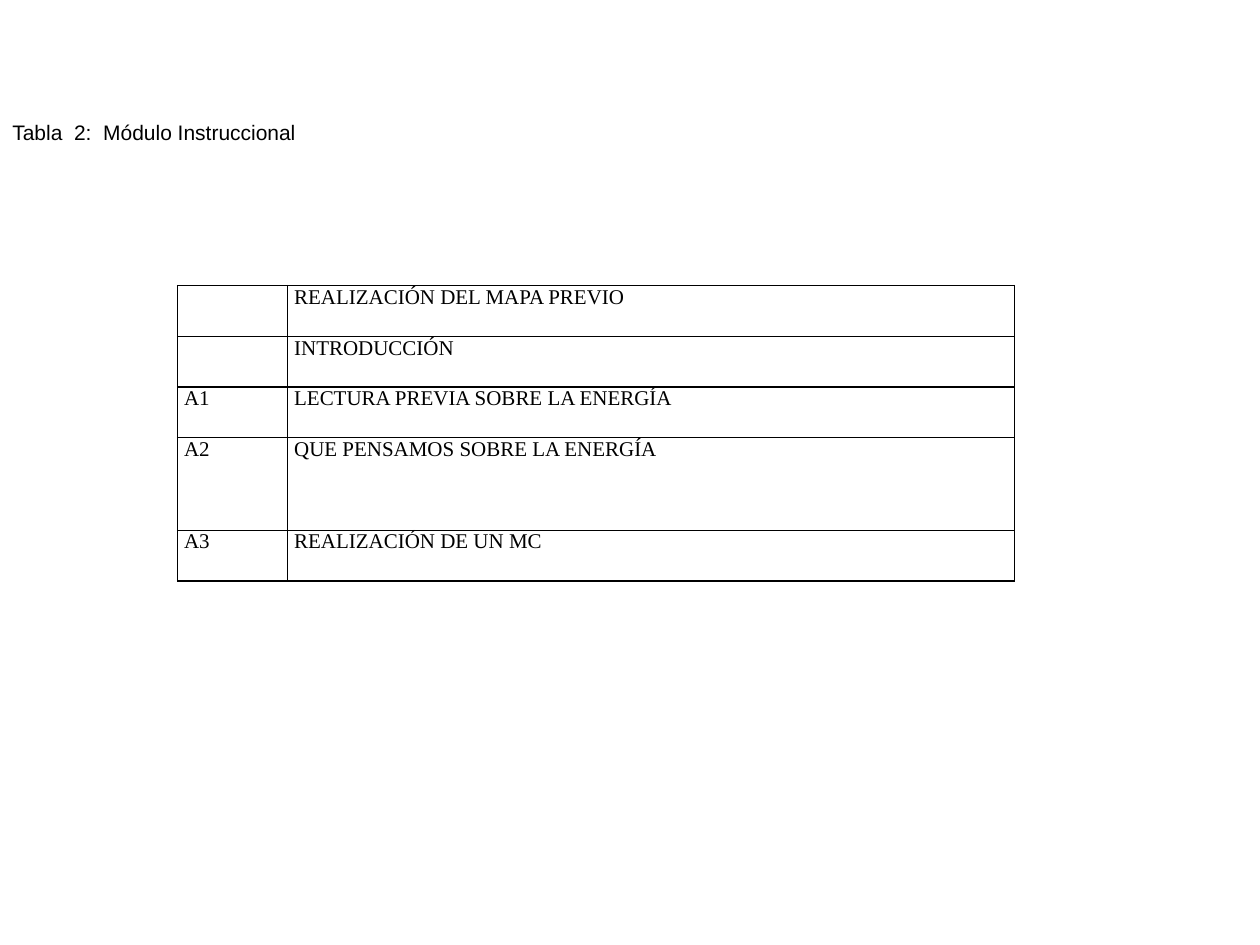
import dataclasses

import lxml.etree
import pptx
import pptx.dml.color
import pptx.enum.text
import pptx.oxml.ns
import pptx.util
from pptx.util import Cm

BLACK = "000000"
BORDER_WIDTH = pptx.util.Pt(1)
COLUMN_WIDTHS = (2.22, 14.65)


@dataclasses.dataclass
class Activity:
    code: str
    title: str
    height: float = 1.02


ACTIVITIES = [
    Activity("", "REALIZACIÓN DEL MAPA PREVIO "),
    Activity("", "INTRODUCCIÓN"),
    Activity("A1", "LECTURA PREVIA SOBRE LA ENERGÍA"),
    Activity("A2", "QUE PENSAMOS SOBRE LA ENERGÍA", 1.87),
    Activity("A3", "REALIZACIÓN DE UN MC "),
]


def color(value: str) -> pptx.dml.color.RGBColor:
    return pptx.dml.color.RGBColor.from_string(value)


def write_text(paragraph, text: str, font_name: str) -> None:
    paragraph.font.size = pptx.util.Pt(12)
    if not text:
        return
    run = paragraph.add_run()
    run.text = text
    run.font.name = font_name
    run.font.size = pptx.util.Pt(12)
    run.font.color.rgb = color(BLACK)


def add_borders(cell) -> None:
    properties = cell._tc.get_or_add_tcPr()
    qualified = pptx.oxml.ns.qn
    # Border lines come before the fill in the cell properties
    for position, side in enumerate(("lnL", "lnR", "lnT", "lnB")):
        line = lxml.etree.Element(qualified(f"a:{side}"), w=str(BORDER_WIDTH))
        fill = lxml.etree.SubElement(line, qualified("a:solidFill"))
        lxml.etree.SubElement(fill, qualified("a:srgbClr"), val=BLACK)
        properties.insert(position, line)


def fill_cell(cell, text: str) -> None:
    cell.margin_left = cell.margin_right = Cm(0.13)
    cell.margin_top = cell.margin_bottom = 0
    cell.fill.background()
    add_borders(cell)
    paragraph = cell.text_frame.paragraphs[0]
    paragraph.alignment = pptx.enum.text.PP_ALIGN.JUSTIFY
    write_text(paragraph, text, "Times New Roman")


def add_activity_table(slide, activities: list[Activity]) -> None:
    height = sum(activity.height for activity in activities)
    shape = slide.shapes.add_table(
        len(activities), len(COLUMN_WIDTHS),
        Cm(3.58), Cm(5.76), Cm(sum(COLUMN_WIDTHS)), Cm(height),
    )
    table = shape.table
    table.first_row = table.horz_banding = False
    for column, width in zip(table.columns, COLUMN_WIDTHS):
        column.width = Cm(width)
    for row, activity in zip(table.rows, activities):
        row.height = Cm(activity.height)
        for cell, text in zip(row.cells, (activity.code, activity.title)):
            fill_cell(cell, text)


def add_caption(slide, text: str) -> None:
    shape = slide.shapes.add_textbox(0, Cm(2.39), Cm(25.4), Cm(1.27))
    frame = shape.text_frame
    frame.word_wrap = True
    frame.margin_top = Cm(0.03)
    write_text(frame.paragraphs[0], text, "Arial")


def main() -> None:
    presentation = pptx.Presentation()
    presentation.slide_width = Cm(25.4)
    presentation.slide_height = Cm(19.05)
    slide = presentation.slides.add_slide(presentation.slide_layouts[6])

    # Table of activities
    add_activity_table(slide, ACTIVITIES)

    # Caption above the table
    add_caption(slide, "Tabla  2:  Módulo Instruccional")

    presentation.save("out.pptx")


if __name__ == "__main__":
    main()
